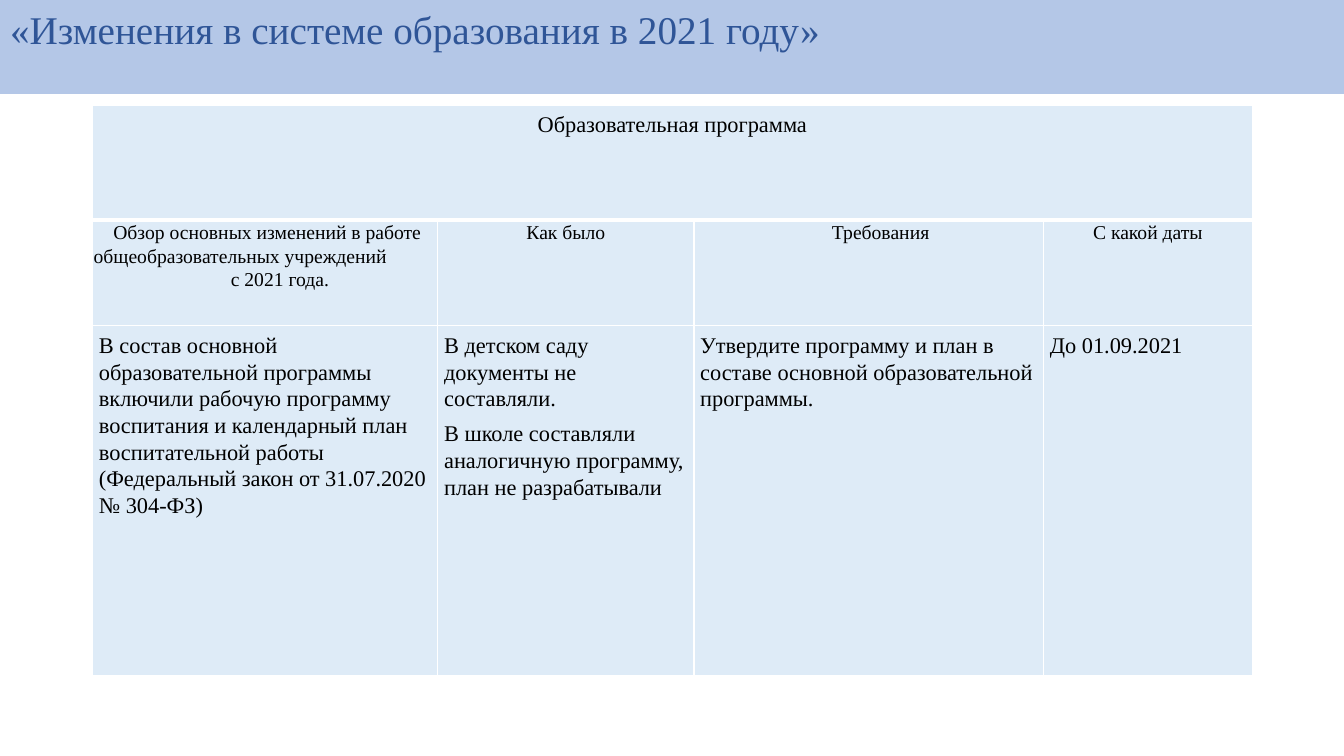
from lxml import etree
from pptx import Presentation
from pptx.dml.color import RGBColor
from pptx.enum import text
from pptx.oxml import ns
from pptx.util import Pt

BAND = RGBColor(0xB4, 0xC7, 0xE7)
NAVY = RGBColor(0x2F, 0x55, 0x97)
PALE = RGBColor(0xDE, 0xEB, 0xF7)
BLACK = RGBColor(0, 0, 0)
WHITE = RGBColor(255, 255, 255)
FACE = "Times New Roman"
LEFT, MID = text.PP_ALIGN.LEFT, text.PP_ALIGN.CENTER

COLS = (246.6, 182.9, 249.8, 149)
ROWS = (
    dict(high=82.1, size=16, pad=4.5, align=MID, cells=[["Образовательная программа"]]),
    dict(high=75.6, size=14, pad=0.7, align=MID, cells=[
        [("Обзор основных изменений в работе", dict(align=MID, shift=3, after=0)),
         ("общеобразовательных учреждений", dict(align=LEFT, after=0)),
         ("с 2021 года.", dict(align=MID, shift=21))],
        ["Как было"],
        [("Требования", dict(align=MID, shift=17))],
        ["С какой даты"]]),
    dict(high=249.8, size=16, pad=4.5, align=LEFT, cells=[
        ["В состав основной образовательной программы включили рабочую программу "
         "воспитания и календарный план воспитательной работы "
         "(Федеральный закон от 31.07.2020 № 304-ФЗ)"],
        ["В детском саду документы не составляли.",
         "В школе составляли аналогичную программу, план не разрабатывали"],
        ["Утвердите программу и план в составе основной образовательной программы."],
        ["До 01.09.2021"]]),
)


def put(item, vals):
    """Set every attribute in a dict of format values."""
    for name, val in vals.items():
        setattr(item, name, val)


def ink(font, size, tint):
    """Give a font its face, size and colour."""
    put(font, dict(name=FACE, size=Pt(size), bold=False))
    font.color.rgb = tint


def head(slide, x, y, wide, high):
    """Place the title band in the given box."""
    band = slide.shapes.title
    put(band, dict(left=Pt(x), top=Pt(y), width=Pt(wide), height=Pt(high)))
    band.fill.solid()
    band.fill.fore_color.rgb = BAND
    frame = band.text_frame
    put(frame, dict(text="«Изменения в системе образования в 2021 году»",
                    word_wrap=True, auto_size=text.MSO_AUTO_SIZE.NONE,
                    vertical_anchor=text.MSO_ANCHOR.TOP,
                    margin_left=Pt(7.2), margin_top=Pt(7.2)))
    line = frame.paragraphs[0]
    line.alignment = LEFT
    ink(line.runs[0].font, 28, NAVY)


def edge(cell, row):
    """Draw white borders, thicker under the top row."""
    thick = {("B", 0): 3, ("T", 1): 3}
    props = cell._tc.get_or_add_tcPr()
    for side in "LRTB":
        rule = etree.SubElement(props, ns.qn("a:ln" + side),
                                w=str(Pt(thick.get((side, row), 1))))
        fill = etree.SubElement(rule, ns.qn("a:solidFill"))
        etree.SubElement(fill, ns.qn("a:srgbClr"), val=str(WHITE))


def write(cell, lines, size, align):
    """Fill a cell with formatted paragraphs."""
    frame = cell.text_frame
    for i, line in enumerate(lines):
        words, look = line if isinstance(line, tuple) else (line, {})
        para = frame.add_paragraph() if i else frame.paragraphs[0]
        put(para, dict(alignment=look.get("align", align), line_spacing=1.07,
                       space_after=Pt(look.get("after", 6))))
        para._p.get_or_add_pPr().set("marL", str(Pt(look.get("shift", 0))))
        run = para.add_run()
        run.text = words
        ink(run.font, size, BLACK)


def grid(slide, x, y):
    """Place the table of changes with its top left corner at x, y."""
    high = sum(row["high"] for row in ROWS)
    table = slide.shapes.add_table(len(ROWS), len(COLS), Pt(x), Pt(y),
                                   Pt(sum(COLS)), Pt(high)).table
    put(table, dict(first_row=False, horz_banding=False))
    for col, wide in zip(table.columns, COLS):
        col.width = Pt(wide)
    table.cell(0, 0).merge(table.cell(0, len(COLS) - 1))
    for r, row in enumerate(ROWS):
        table.rows[r].height = Pt(row["high"])
        for c in range(len(COLS)):
            cell = table.cell(r, c)
            edge(cell, r)
            cell.fill.solid()
            cell.fill.fore_color.rgb = PALE
            put(cell, {"margin_" + side: Pt(row["pad"])
                       for side in ("left", "right", "top", "bottom")})
            if c < len(row["cells"]):
                write(cell, row["cells"][c], row["size"], row["align"])


def main():
    """Build and save the slide."""
    deck = Presentation()
    put(deck, dict(slide_width=Pt(960), slide_height=Pt(540)))
    slide = deck.slides.add_slide(deck.slide_layouts[0])
    sub = slide.placeholders[1].element
    sub.getparent().remove(sub)
    head(slide, 0, -3.6, 960, 70.6)
    grid(slide, 66.2, 75)
    deck.save("out.pptx")


if __name__ == "__main__":
    main()
